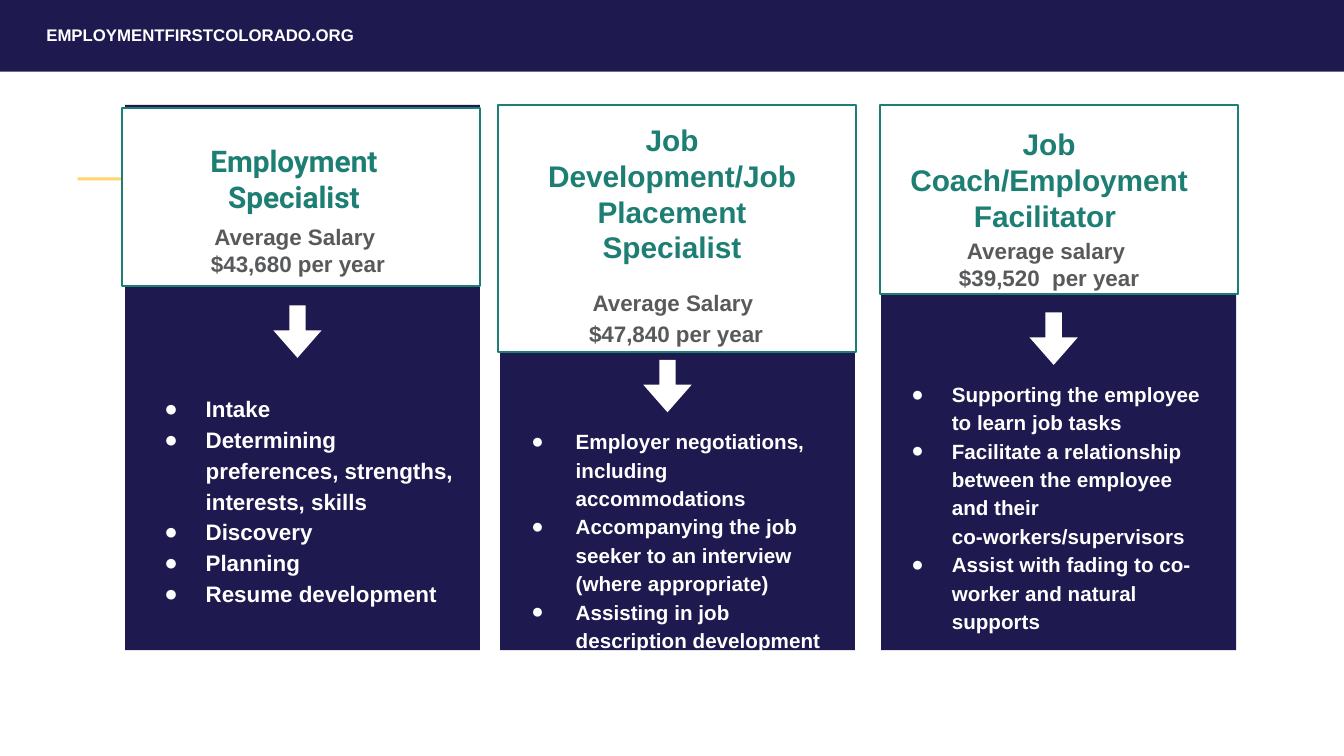
import pptx
import pptx.util
import pptx.dml.color
import pptx.enum.shapes
import pptx.enum.text
import pptx.oxml
import pptx.oxml.ns
from dataclasses import dataclass

Inches = pptx.util.Inches
SHAPES = pptx.enum.shapes.MSO_SHAPE
ALIGN = pptx.enum.text.PP_ALIGN


@dataclass(frozen=True)
class Theme:
    navy: str = "1E194F"
    teal: str = "1D7E74"
    yellow: str = "FFD56E"
    gray: str = "58595B"
    white: str = "FFFFFF"
    font: str = "Arial"
    header_size: float = 12
    title_size: float = 21.3
    salary_size: float = 16


theme = Theme()


def add_block(page, kind, left, top, width, height, fill, line=None):
    shape = page.shapes.add_shape(
        kind, Inches(left), Inches(top), Inches(width), Inches(height))
    shape.shadow.inherit = False
    shape.fill.solid()
    shape.fill.fore_color.rgb = pptx.dml.color.RGBColor.from_string(fill)
    if line:
        shape.line.color.rgb = pptx.dml.color.RGBColor.from_string(line)
        shape.line.width = pptx.util.Pt(1.5)
    else:
        shape.line.fill.background()
    return shape


def add_text(page, left, top, width, height, lines, size, color,
             font=theme.font, align=ALIGN.CENTER, spacing=None, hanging=None):
    box = page.shapes.add_textbox(
        Inches(left), Inches(top), Inches(width), Inches(height))
    frame = box.text_frame
    frame.word_wrap = True
    frame.margin_left = frame.margin_right = Inches(0.13)
    frame.margin_top = frame.margin_bottom = Inches(0.13)
    frame.text = "\n".join(lines)
    for para in frame.paragraphs:
        para.alignment = align
        if spacing:
            para.line_spacing = spacing
        if hanging:
            properties = para._p.get_or_add_pPr()
            properties.set("marL", str(Inches(0.67)))
            properties.set("indent", str(-Inches(hanging)))
            namespace = pptx.oxml.ns.nsdecls("a")
            for bullet in (
                f'<a:buClr {namespace}><a:srgbClr val="{color}"/></a:buClr>',
                f'<a:buFont {namespace} typeface="{theme.font}"/>',
                f'<a:buChar {namespace} char="●"/>',
            ):
                properties.append(pptx.oxml.parse_xml(bullet))
        for span in para.runs:
            span.font.name = font
            span.font.size = pptx.util.Pt(size)
            span.font.bold = True
            span.font.color.rgb = pptx.dml.color.RGBColor.from_string(color)
    return box


deck = pptx.Presentation()
deck.slide_width = Inches(13.33)
deck.slide_height = Inches(7.5)
page = deck.slides.add_slide(deck.slide_layouts[6])

# Header band and yellow accent
add_block(page, SHAPES.RECTANGLE, 0, 0, 13.33, 0.71, theme.navy)
add_block(page, SHAPES.RECTANGLE, 0.77, 1.76, 1.43, 0.03, theme.yellow)
header = add_text(page, 0.33, 0.11, 3.9, 0.47, ["EMPLOYMENTFIRSTCOLORADO.ORG"],
                  theme.header_size, theme.white, align=ALIGN.LEFT)
header.text_frame.vertical_anchor = pptx.enum.text.MSO_ANCHOR.MIDDLE

# Job roles: positions are (left, top), cards are (left, top, height)
roles = [
    dict(panel=1.24, card=(1.21, 1.07, 1.77),
         title="Employment Specialist", title_at=(1.34, 1.29), font="Roboto",
         salary=["Average Salary ", "$43,680 per year"],
         salary_at=(1.38, 2.08), salary_spacing=None, arrow_at=(2.69, 3.05),
         duties=["Intake",
                 "Determining preferences, strengths, interests, skills",
                 "Discovery", "Planning", "Resume development"],
         duties_at=(1.24, 3.75), duty_size=16, hanging=0.41),
    dict(panel=4.96, card=(4.94, 1.04, 2.45),
         title="Job Development/Job Placement Specialist",
         title_at=(5.09, 1.08), font=theme.font,
         salary=["Average Salary ", "$47,840 per year"],
         salary_at=(5.13, 2.7), salary_spacing=1.15, arrow_at=(6.36, 3.59),
         duties=["Employer negotiations, including accommodations",
                 "Accompanying the job seeker to an interview (where appropriate)",
                 "Assisting in job description development"],
         duties_at=(4.91, 4.09), duty_size=14.7, hanging=0.44),
    dict(panel=8.74, card=(8.73, 1.04, 1.88),
         title="Job Coach/Employment Facilitator ",
         title_at=(8.83, 1.12), font=theme.font,
         salary=["Average salary ", "$39,520  per year"],
         salary_at=(8.83, 2.22), salary_spacing=None, arrow_at=(10.19, 3.12),
         duties=["Supporting the employee to learn job tasks",
                 "Facilitate a relationship between the employee and their "
                 "co-workers/supervisors",
                 "Assist with fading to co-worker and natural supports"],
         duties_at=(8.64, 3.62), duty_size=14.7, hanging=0.4),
]

for role in roles:
    # Navy panel with the white card on top
    add_block(page, SHAPES.RECTANGLE, role["panel"], 1.04, 3.52, 5.41, theme.navy)
    left, top, height = role["card"]
    add_block(page, SHAPES.RECTANGLE, left, top, 3.55, height,
              theme.white, theme.teal)

    # Salary and job title
    add_text(page, *role["salary_at"], 3.15, 0.81, role["salary"],
             theme.salary_size, theme.gray, spacing=role["salary_spacing"])
    add_text(page, *role["title_at"], 3.15, 0.9, [role["title"]],
             theme.title_size, theme.teal, font=role["font"])

    # Arrow pointing down to the duties
    arrow = add_block(page, SHAPES.RIGHT_ARROW, *role["arrow_at"], 0.52, 0.48,
                      theme.white)
    arrow.rotation = 90
    arrow.adjustments[0] = 0.34
    arrow.adjustments[1] = 0.57
    add_text(page, *role["duties_at"], 3.52, 1.44, role["duties"],
             role["duty_size"], theme.white, align=ALIGN.LEFT, spacing=1.15,
             hanging=role["hanging"])

deck.save("out.pptx")
